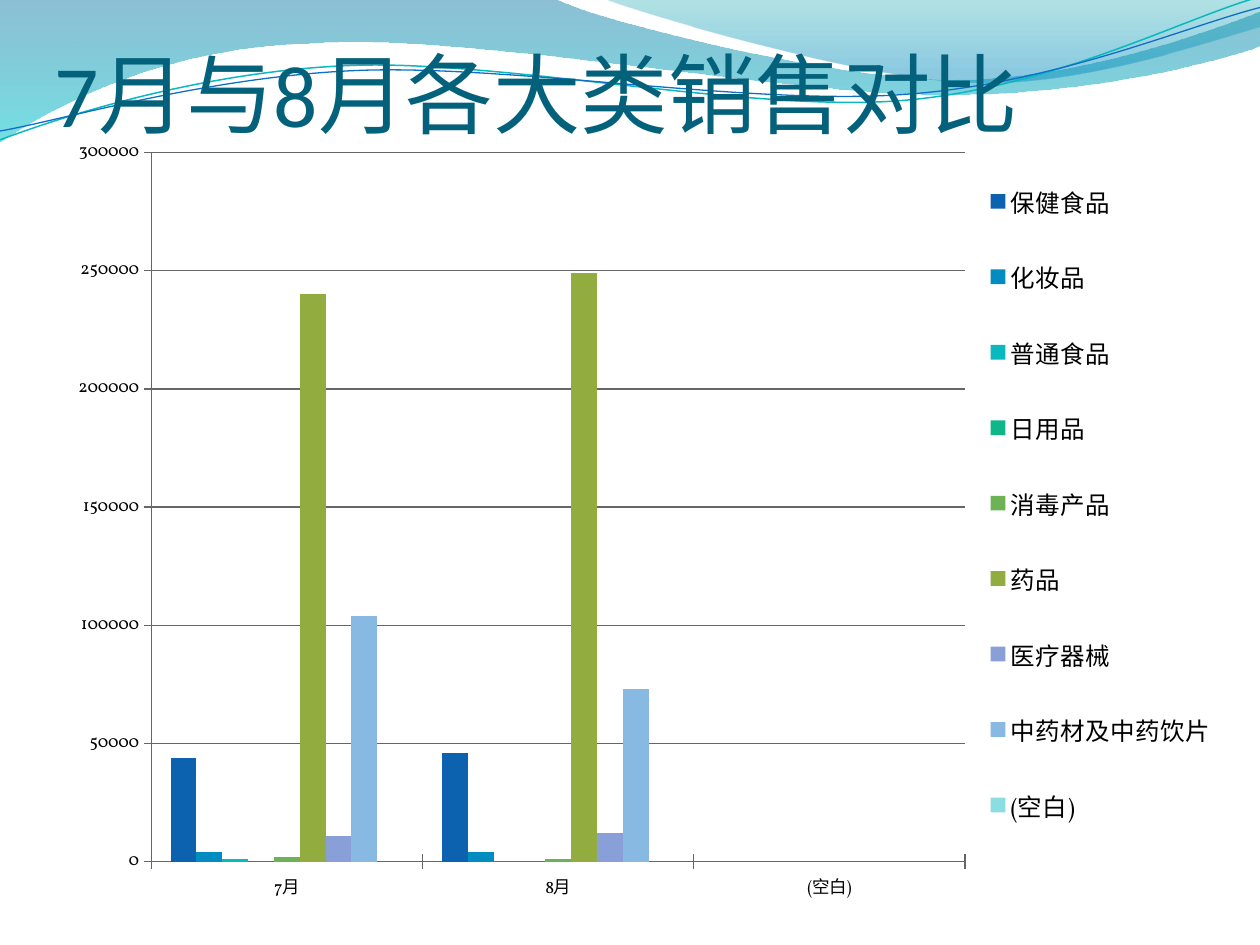
from math import cos, radians, sin
from typing import NamedTuple

from lxml.etree import SubElement
from pptx import Presentation
from pptx.chart.data import CategoryChartData
from pptx.dml.color import RGBColor
from pptx.enum.chart import XL_CHART_TYPE, XL_LEGEND_POSITION, XL_TICK_MARK
from pptx.enum.text import MSO_ANCHOR
from pptx.oxml import parse_xml
from pptx.oxml.ns import nsdecls, qn
from pptx.util import Inches, Pt

Point = tuple[float, float]
CHART_WIDTH, CHART_HEIGHT = 9.37, 6.3


class Stop(NamedTuple):
    position: float
    color: str
    opacity: int


class Wave(NamedTuple):
    """An outline; a step is one point (straight) or three (Bezier curve)."""
    start: Point
    steps: list[list[Point]]
    stops: tuple[Stop, ...] = ()
    line_color: str = ""
    line_width: float = 0
    tilt: float = 0
    center: Point = (0, 0)


class Series(NamedTuple):
    name: str
    color: str
    values: tuple


WAVES = [
    Wave((0, 0), [
        [(4.4, -0.01)],
        [(4.76, 0.17), (6.64, 0.63), (7.58, 0.63)],
        [(8.53, 0.63), (9.58, 0.26), (10, 0.09)],
        [(10.01, 0.36)],
        [(9.83, 0.44), (8.7, 0.76), (7.46, 0.75)],
        [(6.22, 0.75), (3.82, 0.28), (2.57, 0.34)],
        [(1.29, 0.36), (0.46, 0.83), (-0.01, 1.13)],
        [(0, 0)],
    ], stops=(Stop(0, "0074A1", 45), Stop(1, "00C6CF", 55))),
    Wave((4.79, -0.01), [
        [(5.09, 0.11), (6.82, 0.62), (7.69, 0.65)],
        [(8.56, 0.69), (9.61, 0.32), (10, 0.21)],
        [(10, 0)],
        [(4.79, -0.01)],
    ], stops=(Stop(0, "00A1A9", 30), Stop(0.8, "008BBF", 45))),
    Wave((0, 1.11), [
        [(0.48, 0.93), (1.58, 0.57), (2.77, 0.52)],
        [(3.95, 0.47), (5.93, 0.89), (7.13, 0.8)],
        [(8.33, 0.71), (9.38, 0.15), (9.98, -0.02)],
    ], line_color="0AB8BF", line_width=0.85, tilt=-2.7, center=(4.99, 0.58)),
    Wave((0, 1.04), [
        [(0.47, 0.96), (1.64, 0.61), (2.83, 0.56)],
        [(4.03, 0.51), (5.97, 0.84), (7.17, 0.75)],
        [(8.36, 0.67), (9.41, 0.21), (10, 0.06)],
    ], line_color="0F6FC6", line_width=0.75, tilt=-2.7, center=(5, 0.59)),
]

CATEGORIES = ["7月", "8月", "(空白)"]
SALES = [
    Series("保健食品", "0D62AF", (44000, 46000, None)),
    Series("化妆品", "008BC1", (4000, 4000, None)),
    Series("普通食品", "0AB8C0", (1000, 0, None)),
    Series("日用品", "0EB789", (0, 0, None)),
    Series("消毒产品", "6DB356", (2000, 1000, None)),
    Series("药品", "92AC40", (240000, 249000, None)),
    Series("医疗器械", "889FD8", (11000, 12000, None)),
    Series("中药材及中药饮片", "87B9E3", (104000, 73000, None)),
    Series("(空白)", "8ADDE1", (None, None, None)),
]


def rgb(color: str) -> RGBColor:
    return RGBColor.from_string(color)


def untilted(point: Point, wave: Wave) -> Point:
    """Place a point where it lies before the shape's own rotation."""
    angle = radians(-wave.tilt)
    dx, dy = point[0] - wave.center[0], point[1] - wave.center[1]
    return (Inches(wave.center[0] + dx * cos(angle) - dy * sin(angle)),
            Inches(wave.center[1] + dx * sin(angle) + dy * cos(angle)))


def bend(shape, steps: list[list[Point]]) -> None:
    """Join the three segments of each curved step into one Bezier curve."""
    segments = iter(list(shape.element.iter(qn("a:lnTo"))))
    for step in steps:
        first, *others = [next(segments) for _ in step]
        if others:
            first.tag = qn("a:cubicBezTo")
            for segment in others:
                first.append(segment[0])
                segment.getparent().remove(segment)


def add_wave(page, wave: Wave) -> None:
    points = [wave.start] + [point for step in wave.steps for point in step]
    placed = [untilted(point, wave) for point in points]
    builder = page.shapes.build_freeform(*placed[0])
    builder.add_line_segments(placed[1:], close=bool(wave.stops))
    shape = builder.convert_to_shape()
    bend(shape, wave.steps)
    shape.rotation = wave.tilt
    shape.shadow.inherit = False
    if wave.stops:
        shape.line.fill.background()
        shape.fill.gradient()
        shape.fill.gradient_angle = 270
        for target, stop in zip(shape.fill.gradient_stops, wave.stops):
            target.position = stop.position
            target.color.rgb = rgb(stop.color)
        colors = list(shape.element.spPr.iter(qn("a:srgbClr")))
        for element, stop in zip(colors, wave.stops):
            SubElement(element, qn("a:alpha"), val=str(stop.opacity * 1000))
    else:
        shape.fill.background()
        shape.line.color.rgb = rgb(wave.line_color)
        shape.line.width = Pt(wave.line_width)


def add_text(page, text: str, *, left: float, top: float, width: float,
             height: float, size: float, font: str, color: str) -> None:
    box = page.shapes.add_textbox(Inches(left), Inches(top), Inches(width), Inches(height))
    frame = box.text_frame
    frame.word_wrap = True
    frame.vertical_anchor = MSO_ANCHOR.BOTTOM
    frame.margin_left = frame.margin_right = frame.margin_bottom = 0
    frame.margin_top = Inches(0.05)
    span = frame.paragraphs[0].add_run()
    span.text = text
    span.font.size = Pt(size)
    span.font.name = font
    span.font.color.rgb = rgb(color)


def manual_layout(left: float, top: float, width: float, height: float, target: str = ""):
    """Lengths in inches from the chart's corner."""
    inner = f'<c:layoutTarget val="{target}"/>' if target else ""
    return parse_xml(
        f'<c:layout {nsdecls("c")}><c:manualLayout>{inner}'
        '<c:xMode val="edge"/><c:yMode val="edge"/>'
        f'<c:x val="{left / CHART_WIDTH}"/><c:y val="{top / CHART_HEIGHT}"/>'
        f'<c:w val="{width / CHART_WIDTH}"/><c:h val="{height / CHART_HEIGHT}"/>'
        '</c:manualLayout></c:layout>')


def add_sales_chart(page) -> None:
    data = CategoryChartData()
    data.categories = CATEGORIES
    for series in SALES:
        data.add_series(series.name, series.values)
    chart = page.shapes.add_chart(
        XL_CHART_TYPE.COLUMN_CLUSTERED, Inches(0.43), Inches(0.99),
        Inches(CHART_WIDTH), Inches(CHART_HEIGHT), data).chart
    chart.has_title = False
    chart.font.size = Pt(10)
    chart.font.name = "Vollkorn"
    chart.font.color.rgb = rgb("000000")

    # Columns
    plot = chart.plots[0]
    plot.gap_width = 150
    plot.overlap = 0
    plot.vary_by_categories = False
    for column, series in zip(plot.series, SALES):
        column.format.fill.solid()
        column.format.fill.fore_color.rgb = rgb(series.color)

    # Axes and gridlines
    value_axis = chart.value_axis
    value_axis.minimum_scale, value_axis.maximum_scale = 0, 300000
    value_axis.major_unit = 50000
    value_axis.has_major_gridlines = True
    for axis in (value_axis, chart.category_axis):
        axis.major_tick_mark = XL_TICK_MARK.CROSS
    for part in (value_axis, chart.category_axis, value_axis.major_gridlines):
        part.format.line.color.rgb = rgb("666666")
        part.format.line.width = Pt(0.75)

    # Legend and plot area positions
    chart.has_legend = True
    legend = chart.legend
    legend.position = XL_LEGEND_POSITION.RIGHT
    legend.include_in_layout = False
    legend.font.size = Pt(14)
    plot_area = chart.element.chart.plotArea
    for old in plot_area.findall(qn("c:layout")):
        plot_area.remove(old)
    plot_area.insert(0, manual_layout(0.77, 0.22, 6.46, 5.63, "inner"))
    position = chart.element.chart.find(qn("c:legend")).find(qn("c:legendPos"))
    position.addnext(manual_layout(7.37, 0.15, 1.87, 5.74))


def main() -> None:
    deck = Presentation()
    deck.slide_width, deck.slide_height = Inches(10), Inches(7.5)
    page = deck.slides.add_slide(deck.slide_layouts[6])
    for wave in WAVES:
        add_wave(page, wave)
    add_text(page, "7月与8月各大类销售对比", left=0.43, top=0, width=9.07,
             height=1.15, size=50, font="Calibri", color="04617B")
    add_sales_chart(page)
    deck.save("out.pptx")


if __name__ == "__main__":
    main()
